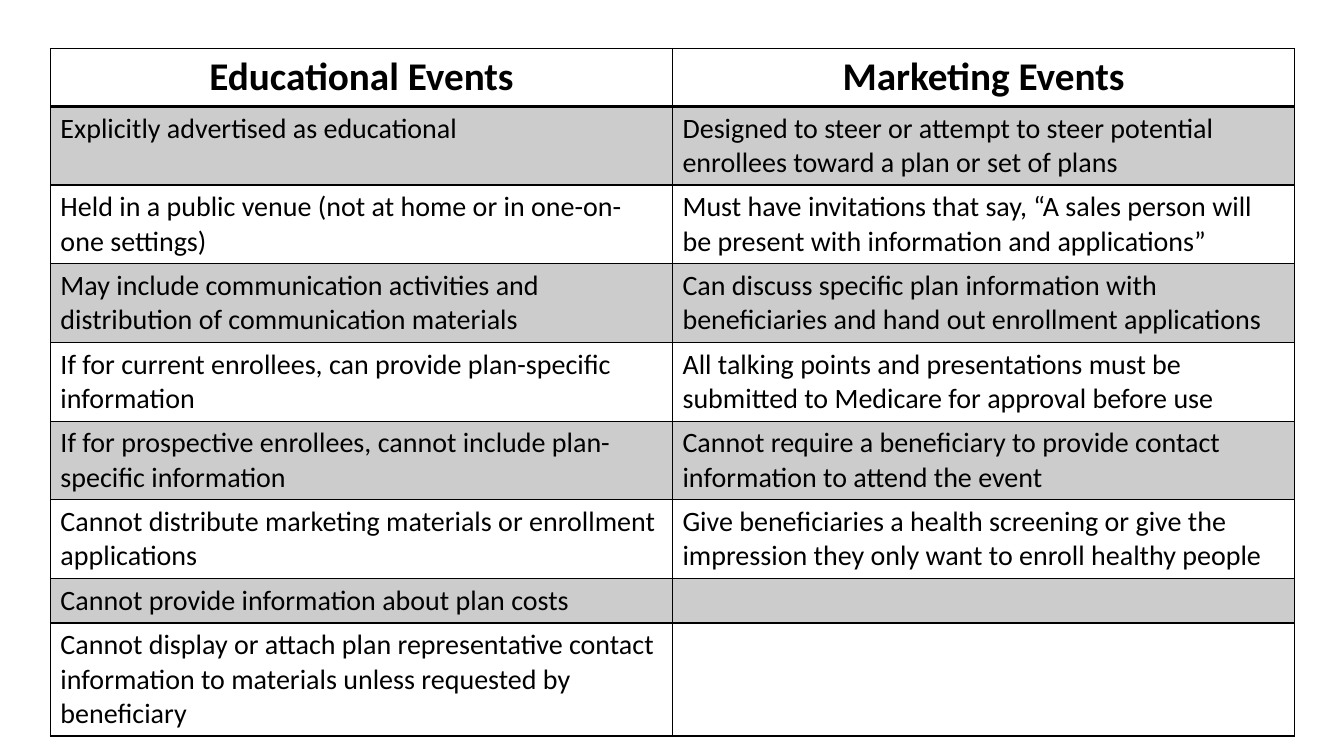
"""Build a slide that compares educational and marketing events in a table."""
from lxml import etree
from pptx import Presentation
from pptx.dml.color import RGBColor
from pptx.enum.text import PP_ALIGN
from pptx.oxml.ns import qn
from pptx.util import Inches, Pt

LEFT, CENTER = PP_ALIGN.LEFT, PP_ALIGN.CENTER
BLACK = RGBColor(0x00, 0x00, 0x00)
SLIDE_W, SLIDE_H = Inches(13.33), Inches(7.5)
TABLE_X, TABLE_Y = Inches(0.5), Inches(0.48)
COL_W = Inches(6.17)
ROW_HEIGHTS = [0.52, 0.66, 0.68, 0.66, 0.62, 0.67, 0.66, 0.43, 0.66]
BAND_OPACITY = 20
SIDES = ("lnL", "lnR", "lnT", "lnB")
HEADER_FONT = {"name": "Calibri", "size": Pt(28), "bold": True}
BODY_FONT = {"name": "Calibri", "size": Pt(20), "bold": False}

ROWS = [
    ("Educational Events", "Marketing Events"),
    ("Explicitly advertised as educational",
     "Designed to steer or attempt to steer potential enrollees toward a plan or set of plans"),
    ("Held in a public venue (not at home or in one-on-one settings)",
     "Must have invitations that say, “A sales person will be present with information and applications”"),
    ("May include communication activities and distribution of communication materials",
     "Can discuss specific plan information with beneficiaries and hand out enrollment applications"),
    ("If for current enrollees, can provide plan-specific information",
     "All talking points and presentations must be submitted to Medicare for approval before use"),
    ("If for prospective enrollees, cannot include plan-specific information",
     "Cannot require a beneficiary to provide contact information to attend the event"),
    ("Cannot distribute marketing materials or enrollment applications",
     "Give beneficiaries a health screening or give the impression they only want to enroll healthy people"),
    ("Cannot provide information about plan costs", ""),
    ("Cannot display or attach plan representative contact information to materials "
     "unless requested by beneficiary", ""),
]


def set_borders(cell, bottom):
    """Draw black lines round a cell, with the given bottom width in points."""
    tcPr = cell._tc.get_or_add_tcPr()
    for side in SIDES:
        width = bottom if side == "lnB" else 1
        ln = etree.SubElement(tcPr, qn(f"a:{side}"), w=str(Pt(width)))
        fill = etree.SubElement(ln, qn("a:solidFill"))
        etree.SubElement(fill, qn("a:srgbClr"), val=str(BLACK))


def set_fill(cell, banded):
    """Give a cell a translucent black band, or no fill."""
    if not banded:
        cell.fill.background()
        return
    cell.fill.solid()
    cell.fill.fore_color.rgb = BLACK
    clr = cell._tc.tcPr.find(qn("a:solidFill")).find(qn("a:srgbClr"))
    etree.SubElement(clr, qn("a:alpha"), val=str(BAND_OPACITY * 1000))


def set_text(cell, text, font, align):
    """Write one formatted paragraph into a cell."""
    p = cell.text_frame.paragraphs[0]
    p.alignment = align
    if not text:
        return
    r = p.add_run()
    r.text = text
    for name, value in font.items():
        setattr(r.font, name, value)
    r.font.color.rgb = BLACK


def add_event_table(s):
    """Add the two-column table with a header and banded rows."""
    n_cols = len(ROWS[0])
    frame = s.shapes.add_table(len(ROWS), n_cols, TABLE_X, TABLE_Y,
                               COL_W * n_cols, Inches(sum(ROW_HEIGHTS)))
    table = frame.table
    table.horz_banding = table.first_row = False
    for col in table.columns:
        col.width = COL_W
    for i, (texts, height) in enumerate(zip(ROWS, ROW_HEIGHTS)):
        header = i == 0
        table.rows[i].height = Inches(height)
        for j, text in enumerate(texts):
            cell = table.cell(i, j)
            set_borders(cell, 2 if header else 1)
            set_fill(cell, i % 2 == 1)
            set_text(cell, text, HEADER_FONT if header else BODY_FONT,
                     CENTER if header else LEFT)


def main():
    """Create the presentation and save it."""
    prs = Presentation()
    prs.slide_width, prs.slide_height = SLIDE_W, SLIDE_H
    s = prs.slides.add_slide(prs.slide_layouts[6])
    add_event_table(s)
    prs.save("out.pptx")


if __name__ == "__main__":
    main()
